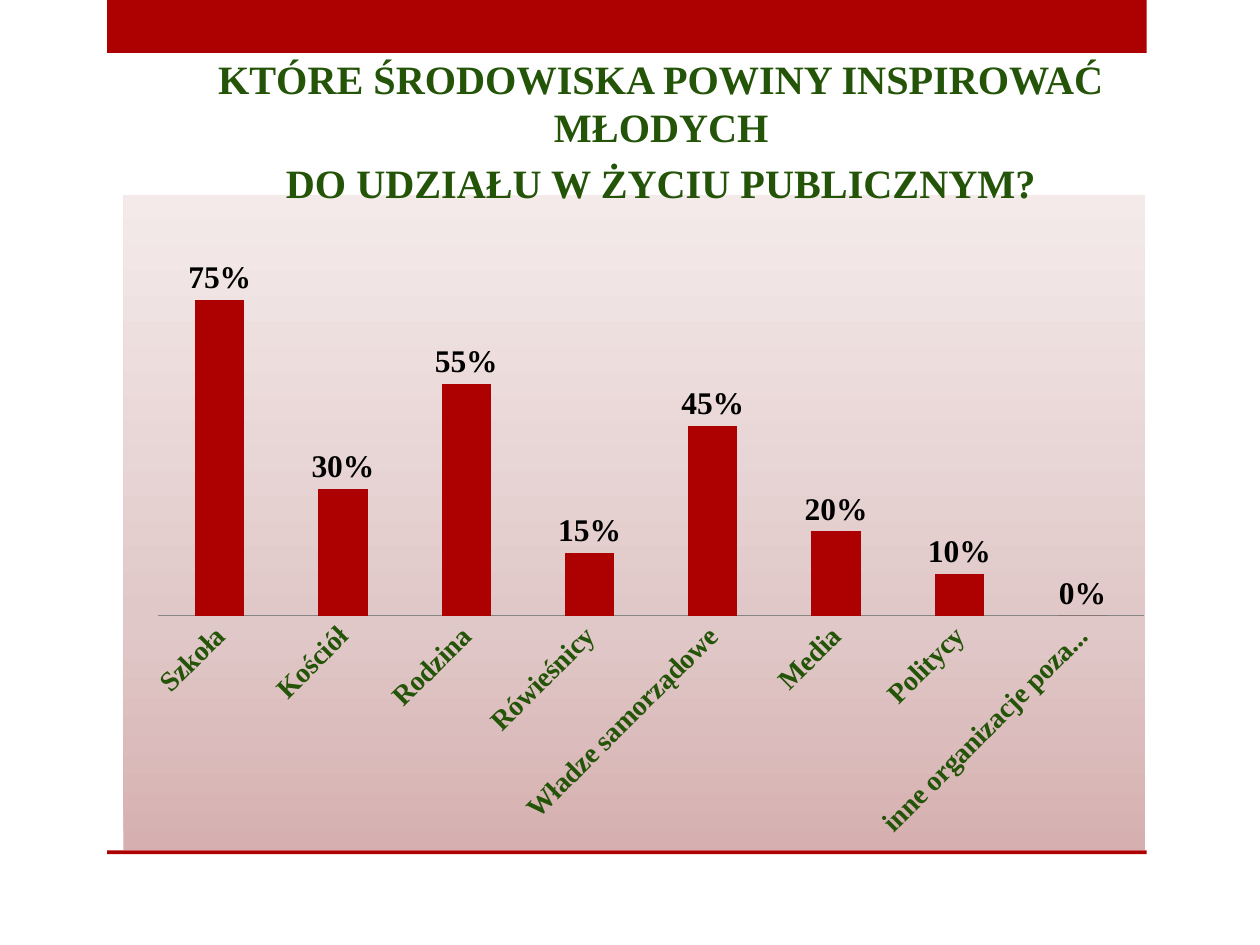
from lxml.etree import fromstring
from pptx import Presentation
from pptx.chart.data import CategoryChartData
from pptx.dml.color import RGBColor
from pptx.enum.chart import XL_CHART_TYPE as ChartType, XL_LABEL_POSITION as LabelPosition
from pptx.enum.chart import XL_TICK_MARK as TickMark
from pptx.enum.shapes import MSO_SHAPE as Shape
from pptx.enum.text import MSO_ANCHOR as Anchor, PP_ALIGN as Align
from pptx.oxml.ns import nsdecls
from pptx.util import Inches, Pt

FONT = "Times New Roman"
RED, GREEN, BLACK, GREY = "AD0101", "235408", "000000", "868686"
GRADIENT = [(0, "D6B0B0"), (35, "E1C8C8"), (100, "F4EAEA")]
TITLE = ["KTÓRE ŚRODOWISKA POWINY INSPIROWAĆ MŁODYCH", "DO UDZIAŁU W ŻYCIU PUBLICZNYM?"]
ANSWERS = {
    "Szkoła": 0.75,
    "Kościół": 0.3,
    "Rodzina": 0.55,
    "Rówieśnicy": 0.15,
    "Władze samorządowe": 0.45,
    "Media": 0.2,
    "Politycy": 0.1,
    "inne organizacje pozarządowe": 0,
}


def color(value):
    return RGBColor.from_string(value)


def style_font(font, size, value, bold=True):
    font.name, font.size, font.bold = FONT, Pt(size), bold
    font.color.rgb = color(value)


def add_band(slide, left, top, width, height):
    band = slide.shapes.add_shape(
        Shape.RECTANGLE, Inches(left), Inches(top), Inches(width), Inches(height))
    band.shadow.inherit = False
    band.fill.solid()
    band.fill.fore_color.rgb = color(RED)
    band.line.fill.background()


def add_frame(slide, left, top, width, height):
    """Thick band on the top edge, thin rule on the bottom edge."""
    rule = 0.03
    add_band(slide, left, top, width, 0.42)
    add_band(slide, left, top + height - rule, width, rule)


def add_title(slide, left, top, width, height):
    box = slide.shapes.add_textbox(Inches(left), Inches(top), Inches(width), Inches(height))
    frame = box.text_frame
    frame.word_wrap = True
    frame.vertical_anchor = Anchor.MIDDLE
    for index, line in enumerate(TITLE):
        paragraph = frame.add_paragraph() if index else frame.paragraphs[0]
        paragraph.alignment = Align.CENTER
        paragraph.space_before = Pt(4.6)
        run = paragraph.add_run()
        run.text = line
        style_font(run.font, 23, GREEN)


def fill_chart_area(chart):
    """Gradient background running from the bottom up, without a border."""
    stops = "".join(
        f'<a:gs pos="{position * 1000}"><a:srgbClr val="{value}"/></a:gs>'
        for position, value in GRADIENT)
    area = fromstring(
        f'<c:spPr {nsdecls("c", "a")}><a:gradFill><a:gsLst>{stops}</a:gsLst>'
        '<a:lin ang="16200000" scaled="0"/></a:gradFill><a:ln><a:noFill/></a:ln></c:spPr>')
    chart.element.chart.addnext(area)


def place_plot(chart, x, y, width, height):
    """Inner plot area, as fractions of the chart."""
    sizes = "".join(
        f'<c:{name} val="{value}"/>'
        for name, value in zip("xywh", (x, y, width, height)))
    layout = fromstring(
        f'<c:layout {nsdecls("c")}><c:manualLayout><c:layoutTarget val="inner"/>'
        f'<c:xMode val="edge"/><c:yMode val="edge"/>{sizes}</c:manualLayout></c:layout>')
    plot_area = chart.element.chart.plotArea
    for old in plot_area.findall(layout.tag):
        plot_area.remove(old)
    plot_area.insert(0, layout)


def add_answer_chart(slide, left, top, width, height):
    data = CategoryChartData(number_format="0%")
    data.categories = list(ANSWERS)
    data.add_series("Series 1", list(ANSWERS.values()))
    chart = slide.shapes.add_chart(
        ChartType.COLUMN_CLUSTERED, Inches(left), Inches(top),
        Inches(width), Inches(height), data).chart
    chart.has_legend = chart.has_title = False
    style_font(chart.font, 10, BLACK, bold=False)
    fill_chart_area(chart)
    place_plot(chart, 0.034, 0.127, 0.965, 0.515)

    # Axes
    category_axis, value_axis = chart.category_axis, chart.value_axis
    category_axis.major_tick_mark = TickMark.NONE
    category_axis.format.line.color.rgb = color(GREY)
    style_font(category_axis.tick_labels.font, 16, GREEN)
    category_axis.tick_labels.font._element.getparent().getparent().getparent().bodyPr.set(
        "rot", "-2700000")
    value_axis.minimum_scale, value_axis.maximum_scale = 0, 0.8
    value_axis.has_major_gridlines = False
    value_axis.visible = False

    # Columns and their labels
    plot = chart.plots[0]
    plot.gap_width = 150
    plot.vary_by_categories = False
    series = plot.series[0]
    series.format.fill.solid()
    series.format.fill.fore_color.rgb = color(RED)
    labels = series.data_labels
    labels.show_value = True
    labels.number_format, labels.number_format_is_linked = "0%", False
    labels.position = LabelPosition.OUTSIDE_END
    style_font(labels.font, 18, BLACK)


def main():
    presentation = Presentation()
    presentation.slide_width, presentation.slide_height = Inches(10), Inches(7.5)
    slide = presentation.slides.add_slide(presentation.slide_layouts[6])
    add_frame(slide, 0.85, 0, 8.25, 6.78)
    add_answer_chart(slide, 0.98, 1.55, 8.11, 5.2)
    add_title(slide, 0.75, 0.21, 9, 1.65)
    presentation.save("out.pptx")


if __name__ == "__main__":
    main()
